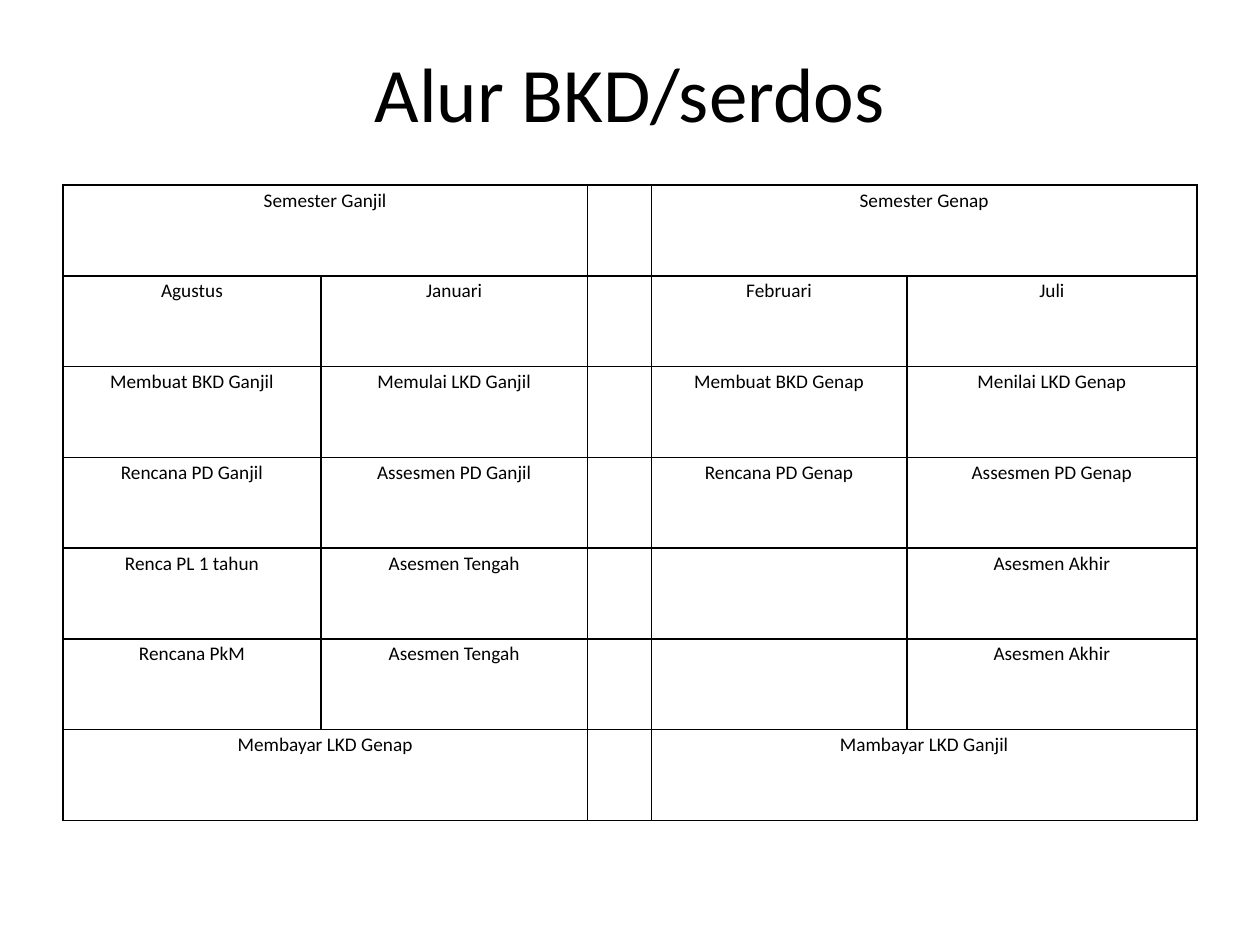
from lxml.etree import SubElement
from pptx import Presentation
from pptx.dml.color import RGBColor
from pptx.enum.text import MSO_ANCHOR, PP_ALIGN
from pptx.oxml.ns import qn
from pptx.util import Cm, Pt

BLACK = RGBColor(0, 0, 0)
FONT = "Calibri"
LEFT, WIDTH = Cm(1.27), Cm(22.86)
COLUMN_WIDTHS = [5.2, 5.37, 1.29, 5.15, 5.85]
ROW_HEIGHT = Cm(1.83)
CELL_FORMAT = {
    "margin_left": Cm(0.18),
    "margin_right": Cm(0.18),
    "margin_top": 0,
    "margin_bottom": 0,
    "vertical_anchor": MSO_ANCHOR.TOP,
}
SEMESTER_SPANS = [(0, 1), (3, 4)]
SPANNED_ROWS = [0, 6]
SCHEDULE = [
    ["Semester Ganjil", "", "", "Semester Genap", ""],
    ["Agustus", "Januari", "", "Februari", "Juli"],
    ["Membuat BKD Ganjil", "Memulai LKD Ganjil", "", "Membuat BKD Genap", "Menilai LKD Genap"],
    ["Rencana PD Ganjil", "Assesmen PD Ganjil", "", "Rencana PD Genap", "Assesmen PD Genap"],
    ["Renca PL 1 tahun", "Asesmen Tengah", "", "", "Asesmen Akhir"],
    ["Rencana PkM", "Asesmen Tengah", "", "", "Asesmen Akhir"],
    ["Membayar LKD Genap", "", "", "Mambayar LKD Ganjil", ""],
]


def write_text(paragraph, text, size, line_spacing=1.0):
    paragraph.alignment = PP_ALIGN.CENTER
    paragraph.line_spacing = line_spacing
    run = paragraph.add_run()
    run.text = text
    for name, value in {"name": FONT, "size": Pt(size)}.items():
        setattr(run.font, name, value)
    run.font.color.rgb = BLACK


def add_title(slide, text):
    title = slide.shapes.add_textbox(LEFT, Cm(0.76), WIDTH, Cm(2.16)).text_frame
    title.word_wrap = True
    title.vertical_anchor = MSO_ANCHOR.MIDDLE
    write_text(title.paragraphs[0], text, 44)


def add_borders(cell):
    properties = cell._tc.get_or_add_tcPr()
    for side in ("lnL", "lnR", "lnT", "lnB"):
        line = SubElement(properties, qn(f"a:{side}"), w=str(Pt(1)))
        fill = SubElement(line, qn("a:solidFill"))
        SubElement(fill, qn("a:srgbClr"), val=str(BLACK))


def format_cell(cell, text):
    for name, value in CELL_FORMAT.items():
        setattr(cell, name, value)
    add_borders(cell)
    cell.fill.background()
    if text:
        write_text(cell.text_frame.paragraphs[0], text, 11, 1.15)


def add_schedule(slide):
    row_count = len(SCHEDULE)
    schedule = slide.shapes.add_table(
        row_count, len(COLUMN_WIDTHS), LEFT, Cm(3.73), WIDTH, ROW_HEIGHT * row_count
    ).table
    for name in ("first_row", "horz_banding"):
        setattr(schedule, name, False)
    for column, width in zip(schedule.columns, COLUMN_WIDTHS):
        column.width = Cm(width)
    for row_index, (row, texts) in enumerate(zip(schedule.rows, SCHEDULE)):
        row.height = ROW_HEIGHT
        for cell, text in zip(row.cells, texts):
            format_cell(cell, text)
        if row_index in SPANNED_ROWS:
            for first, last in SEMESTER_SPANS:
                schedule.cell(row_index, first).merge(schedule.cell(row_index, last))


def main():
    presentation = Presentation()
    presentation.slide_width = Cm(25.4)
    presentation.slide_height = Cm(19.05)
    slide = presentation.slides.add_slide(presentation.slide_layouts[6])
    add_title(slide, "Alur BKD/serdos")
    add_schedule(slide)
    presentation.save("out.pptx")


if __name__ == "__main__":
    main()
